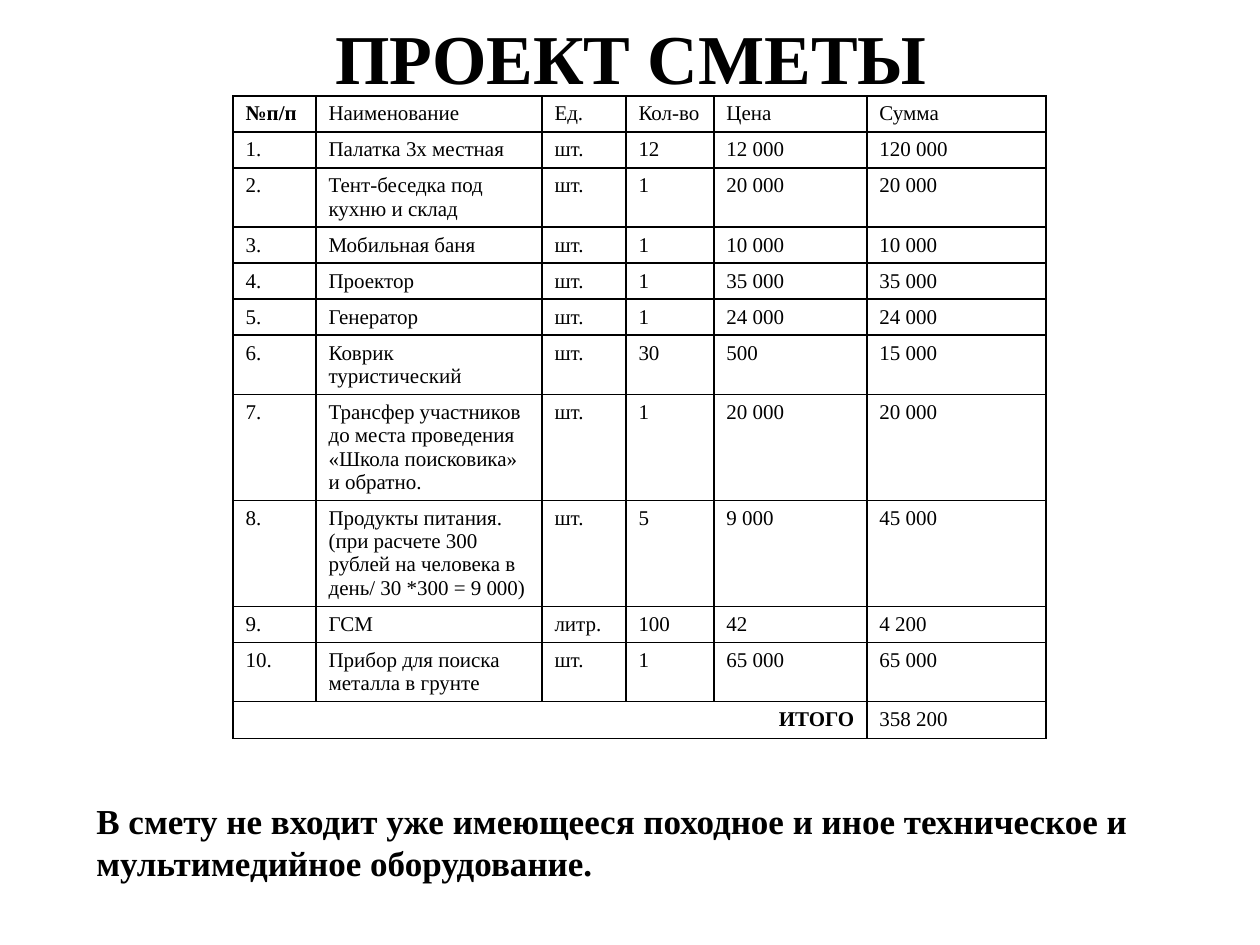
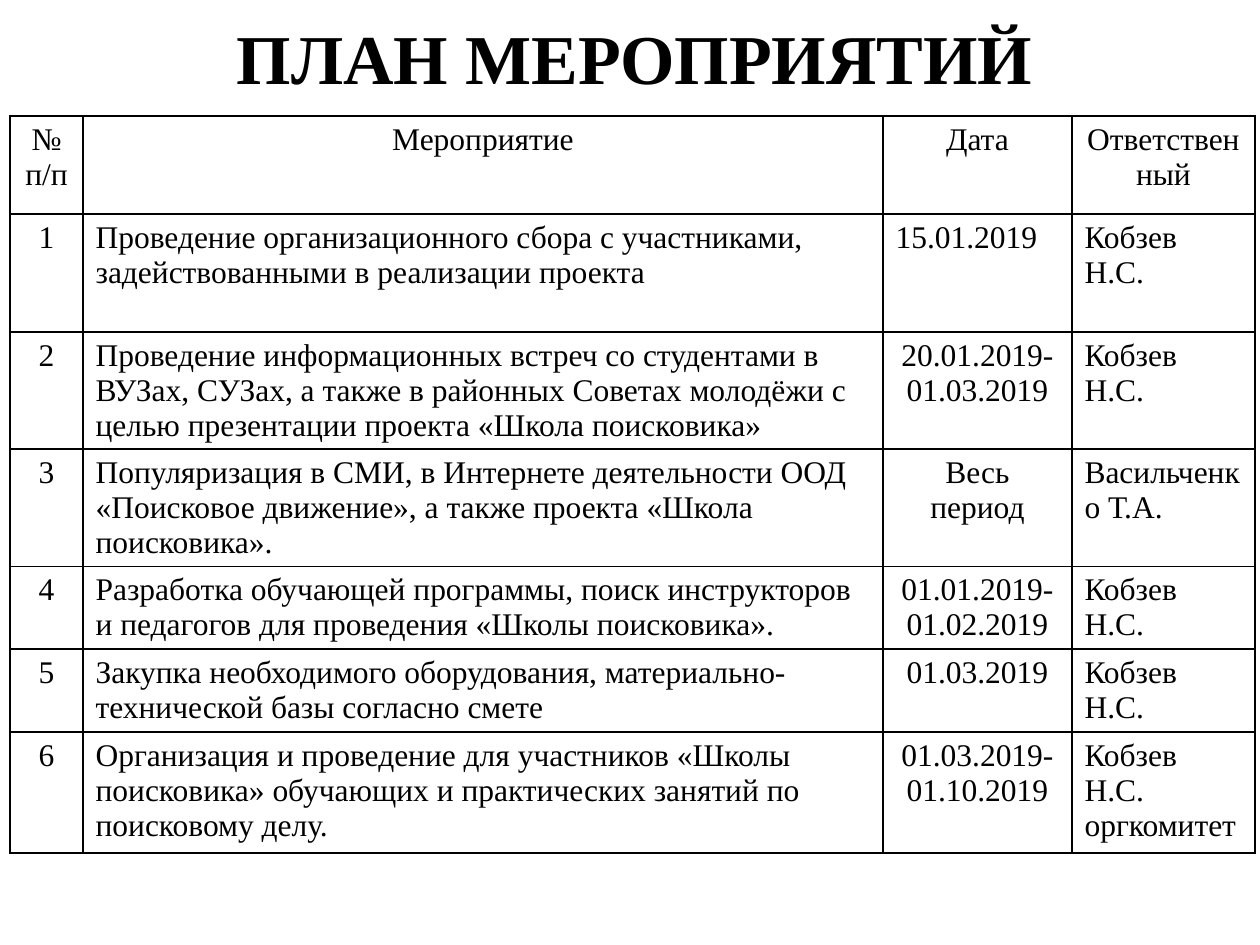
"""Builds the project budget and the event plan as two table slides."""
from lxml import etree
from pptx import Presentation
from pptx import util as u
from pptx.dml.color import RGBColor
from pptx.enum import text
from pptx.oxml import ns

BLACK = RGBColor(0, 0, 0)
WHITE = RGBColor(255, 255, 255)
FONT = "Times New Roman"
SCALE = 914400 / 126
SIDES = {"l": text.PP_ALIGN.LEFT, "c": text.PP_ALIGN.CENTER, "r": text.PP_ALIGN.RIGHT}

COSTS = {
    "spot": (233, 96), "size": 12, "head": "llllll", "body": "llllll",
    "cols": [83, 226, 84, 88, 153, 179],
    "rows": [36, 36, 59, 36, 36, 36, 59, 106, 106, 36, 59, 37],
    "bold": {(0, 0), (11, 0)}, "turn": {(11, 0): "r"}, "spans": [((11, 0), (11, 4))],
    "cells": [
        ["№п/п", "Наименование", "Ед.", "Кол-во", "Цена", "Сумма"],
        ["1.", "Палатка 3х местная", "шт.", "12", "12 000", "120 000"],
        ["2.", "Тент-беседка под кухню и склад", "шт.", "1", "20 000", "20 000"],
        ["3.", "Мобильная баня", "шт.", "1", "10 000", "10 000"],
        ["4.", "Проектор", "шт.", "1", "35 000", "35 000"],
        ["5.", "Генератор", "шт.", "1", "24 000", "24 000"],
        ["6.", "Коврик туристический", "шт.", "30", "500", "15 000"],
        ["7.", "Трансфер участников до места проведения «Школа поисковика» и обратно.",
         "шт.", "1", "20 000", "20 000"],
        ["8.", "Продукты питания.\n(при расчете 300 рублей на человека в день/ 30 *300 = 9 000)",
         "шт.", "5", "9 000", "45 000"],
        ["9.", "ГСМ", "литр.", "100", "42", "4 200"],
        ["10.", "Прибор для поиска металла в грунте", "шт.", "1", "65 000", "65 000"],
        ["ИТОГО", "", "", "", "", "358 200"],
    ],
}
CHIEF = "Кобзев Н.С."
PLAN = {
    "spot": (10, 116), "size": 18, "head": "cccc", "body": "clcl",
    "cols": [73, 800, 189, 183],
    "rows": [98, 118, 117, 117, 82, 83, 121],
    "bold": set(), "turn": {(1, 2): "l"}, "spans": [],
    "cells": [
        ["№ п/п", "Мероприятие", "Дата", "Ответственный"],
        ["1", "Проведение организационного сбора с участниками, задействованными в реализации проекта",
         "15.01.2019", CHIEF],
        ["2", "Проведение информационных встреч со студентами в ВУЗах, СУЗах, а также в районных "
         "Советах молодёжи с целью презентации проекта «Школа поисковика»",
         "20.01.2019-01.03.2019", CHIEF],
        ["3", "Популяризация в СМИ, в Интернете деятельности ООД «Поисковое движение», "
         "а также проекта «Школа поисковика».", "Весь период", "Васильченко Т.А."],
        ["4", "Разработка обучающей программы, поиск инструкторов и педагогов для проведения "
         "«Школы поисковика».", "01.01.2019-01.02.2019", CHIEF],
        ["5", "Закупка необходимого оборудования, материально-технической базы согласно смете",
         "01.03.2019", CHIEF],
        ["6", "Организация и проведение для участников «Школы поисковика» обучающих и "
         "практических занятий по поисковому делу.",
         "01.03.2019-\n01.10.2019", CHIEF + "\nоргкомитет"],
    ],
}
NOTE = "В смету не входит уже имеющееся походное и иное техническое и мультимедийное оборудование."
PAGES = [
    {"title": "ПРОЕКТ СМЕТЫ", "box": (323, 0, 714, 141), "side": "l", "grid": COSTS, "note": NOTE},
    {"title": "ПЛАН МЕРОПРИЯТИЙ", "box": (213, 0, 843, 141), "side": "c", "grid": PLAN},
]


def px(num):
    return u.Emu(round(num * SCALE))


def write(frame, words, size, bold=False, side="l"):
    for i, line in enumerate(words.split("\n")):
        para = frame.add_paragraph() if i else frame.paragraphs[0]
        para.alignment = SIDES[side]
        run = para.add_run()
        run.text = line
        font = run.font
        font.name, font.size, font.bold = FONT, u.Pt(size), bold
        font.color.rgb = BLACK


def edge(cell):
    cell.fill.background()
    props = cell._tc.get_or_add_tcPr()
    for i, name in enumerate(("lnL", "lnR", "lnT", "lnB")):
        line = etree.Element(ns.qn("a:" + name), w="12700")
        fill = etree.SubElement(line, ns.qn("a:solidFill"))
        etree.SubElement(fill, ns.qn("a:srgbClr"), val=str(BLACK))
        props.insert(i, line)


def add_grid(slide, grid):
    cols, rows = grid["cols"], grid["rows"]
    box = (*grid["spot"], sum(cols), sum(rows))
    table = slide.shapes.add_table(len(rows), len(cols), *map(px, box)).table
    table.first_row = table.horz_banding = False
    for col, wide in zip(table.columns, cols):
        col.width = px(wide)
    for row, high in zip(table.rows, rows):
        row.height = px(high)
    for start, end in grid["spans"]:
        table.cell(*start).merge(table.cell(*end))
    for r, line in enumerate(grid["cells"]):
        sides = grid["body"] if r else grid["head"]
        for c, words in enumerate(line):
            cell = table.cell(r, c)
            edge(cell)
            if words:
                side = grid["turn"].get((r, c), sides[c])
                write(cell.text_frame, words, grid["size"], (r, c) in grid["bold"], side)


def add_title(slide, page):
    title = slide.shapes.title
    title.left, title.top, title.width, title.height = map(px, page["box"])
    frame = title.text_frame
    frame.auto_size = text.MSO_AUTO_SIZE.NONE
    frame.vertical_anchor = text.MSO_ANCHOR.TOP
    frame.margin_top = px(15)
    write(frame, page["title"], 40, True, page["side"])


def add_note(slide, words):
    frame = slide.shapes.add_textbox(*map(px, (84, 780, 1145, 110))).text_frame
    frame.word_wrap = True
    frame.vertical_anchor = text.MSO_ANCHOR.BOTTOM
    write(frame, words, 20, True)


def main():
    deck = Presentation()
    deck.slide_width, deck.slide_height = px(1260), px(945)
    for page in PAGES:
        slide = deck.slides.add_slide(deck.slide_layouts[5])
        slide.background.fill.solid()
        slide.background.fill.fore_color.rgb = WHITE
        add_title(slide, page)
        add_grid(slide, page["grid"])
        if "note" in page:
            add_note(slide, page["note"])
    deck.save("out.pptx")


if __name__ == "__main__":
    main()
